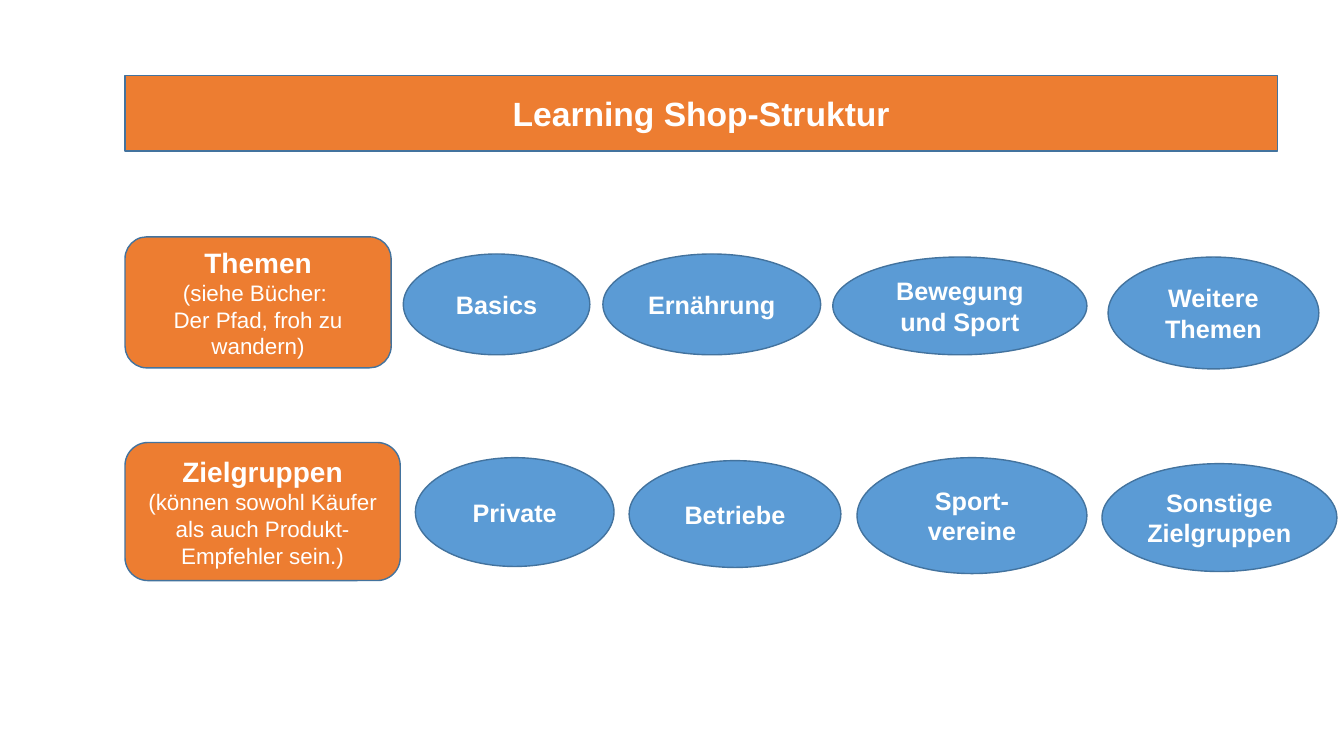
"""Build the Learning Shop structure slide."""
from dataclasses import dataclass

from pptx import Presentation
from pptx.dml.color import RGBColor
from pptx.enum.shapes import MSO_SHAPE as Shape
from pptx.enum.text import MSO_ANCHOR as Anchor, PP_ALIGN as Align
from pptx.slide import Slide
from pptx.text.text import _Paragraph as Paragraph
from pptx.util import Inches, Pt


@dataclass(frozen=True)
class Theme:
    """Colours, font and type sizes of the slide."""
    orange: RGBColor = RGBColor.from_string("ED7D31")
    blue: RGBColor = RGBColor.from_string("5B9BD5")
    outline: RGBColor = RGBColor.from_string("43739E")
    white: RGBColor = RGBColor.from_string("FFFFFF")
    font: str = "Arial"
    title: int = 24
    heading: int = 20
    topic: int = 18
    detail: int = 16


THEME = Theme()


@dataclass(frozen=True)
class Node:
    """A labelled shape with its place in inches."""
    label: str
    left: float
    top: float
    width: float
    height: float
    detail: str = ""


BANNER = Node("Learning Shop-Struktur", 1.24, 0.75, 11.43, 0.75)
HEADINGS = [
    Node("Themen", 1.24, 2.35, 2.64, 1.3,
         "(siehe Bücher: \nDer Pfad, froh zu wandern)"),
    Node("Zielgruppen", 1.24, 4.39, 2.73, 1.37,
         "(können sowohl Käufer als auch Produkt-Empfehler sein.)"),
]
TOPICS = [
    Node("Basics", 4, 2.52, 1.85, 1),
    Node("Ernährung", 5.98, 2.52, 2.16, 1),
    Node("Bewegung und Sport", 8.26, 2.55, 2.52, 0.97),
    Node("Weitere Themen", 10.99, 2.55, 2.09, 1.11),
    Node("Private", 4.12, 4.54, 1.97, 1.08),
    Node("Betriebe", 6.24, 4.57, 2.1, 1.06),
    Node("Sport-vereine", 8.5, 4.54, 2.28, 1.15),
    Node("Sonstige Zielgruppen", 10.93, 4.6, 2.33, 1.07),
]


def add_text(para: Paragraph, text: str, *, size: int, bold: bool) -> None:
    """Add formatted text, with a line break at each newline."""
    for index, line in enumerate(text.split("\n")):
        if index:
            para.add_line_break()
        span = para.add_run()
        span.text = line
        span.font.name = THEME.font
        span.font.size = Pt(size)
        span.font.bold = bold
        span.font.color.rgb = THEME.white


def draw_node(page: Slide, node: Node, kind: Shape, fill: RGBColor, size: int) -> None:
    """Draw one filled shape with its centred label and detail."""
    place = (Inches(v) for v in (node.left, node.top, node.width, node.height))
    box = page.shapes.add_shape(kind, *place)
    box.shadow.inherit = False
    box.fill.solid()
    box.fill.fore_color.rgb = fill
    box.line.color.rgb = THEME.outline
    box.line.width = Pt(1)
    frame = box.text_frame
    frame.word_wrap = True
    frame.vertical_anchor = Anchor.MIDDLE
    para = frame.paragraphs[0]
    para.alignment = Align.CENTER
    add_text(para, node.label, size=size, bold=True)
    if node.detail:
        para.add_line_break()
        add_text(para, node.detail, size=THEME.detail, bold=False)


def main() -> None:
    """Create and save the deck."""
    deck = Presentation()
    deck.slide_width, deck.slide_height = Inches(13.33), Inches(7.5)
    page = deck.slides.add_slide(deck.slide_layouts[6])
    draw_node(page, BANNER, Shape.RECTANGLE, THEME.orange, THEME.title)
    for heading in HEADINGS:
        draw_node(page, heading, Shape.ROUNDED_RECTANGLE, THEME.orange, THEME.heading)
    for topic in TOPICS:
        draw_node(page, topic, Shape.OVAL, THEME.blue, THEME.topic)
    deck.save("out.pptx")


if __name__ == "__main__":
    main()
